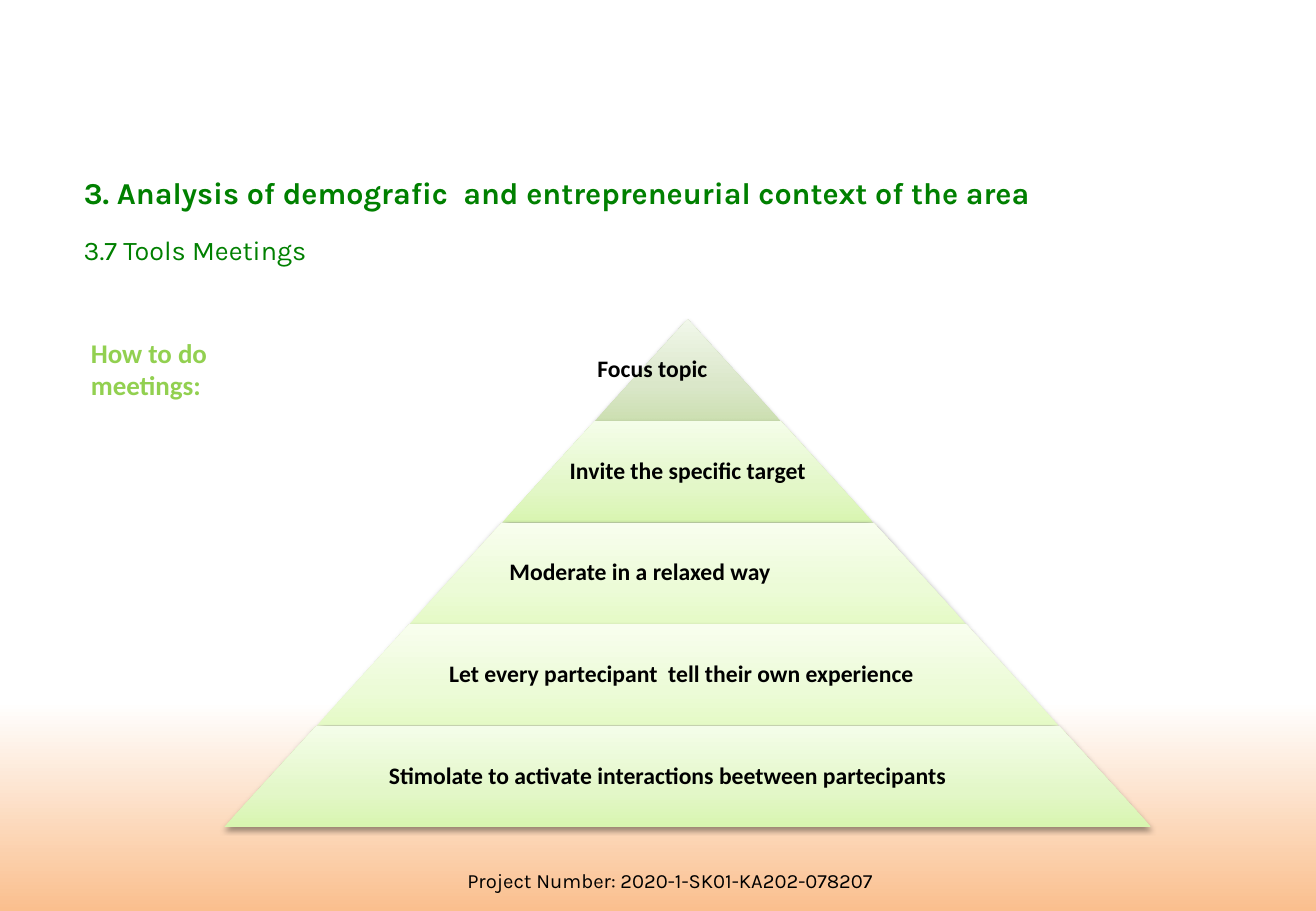
from lxml.etree import SubElement as Sub
from pptx import Presentation
from pptx.dml.color import RGBColor as RGB
from pptx.enum.shapes import MSO_SHAPE as Kind
from pptx.enum.text import MSO_ANCHOR as Anchor, MSO_AUTO_SIZE as Fit, PP_ALIGN as Align
from pptx.oxml.ns import qn
from pptx.util import Inches, Pt

GREEN, LIME, BLACK = "008000", "92D050", "000000"
PALE = [(0, "E5FAC6"), (35, "ECFBD7"), (100, "F8FEEE")]
FRESH = [(0, "D8F5B0"), (35, "E3F7C8"), (100, "F4FDE9")]
SAGE = [(0, "CCDFB1"), (35, "DAE7C9"), (100, "F1F7EA")]
PAGE = [(0, "FFFFFF"), (77, "FFFFFF"), (100, "FABF8E")]
TIERS = [
    ("Focus topic", SAGE),
    ("Invite the specific target", FRESH),
    ("Moderate in a relaxed way", PALE),
    ("Let every partecipant  tell their own experience", PALE),
    ("Stimolate to activate interactions beetween partecipants", FRESH),
]
MID, TOP = 5.66, 2.63
STEP, HIGH = 7.63 / len(TIERS), 4.18 / len(TIERS)


def color(code):
    """Turn a hex string into a colour."""
    return RGB.from_string(code)


def blend(fill, root, stops, angle):
    """Give a fill a linear gradient with any number of stops."""
    fill.gradient()
    fill.gradient_angle = angle
    group = root.find(".//" + qn("a:gsLst"))
    for old in list(group):
        group.remove(old)
    for place, code in stops:
        stop = Sub(group, qn("a:gs"), pos=str(place * 1000))
        Sub(stop, qn("a:srgbClr"), val=code)


def write(shape, text, size=14, font="Calibri", code=BLACK, bold=False,
          align=Align.LEFT, anchor=Anchor.TOP, pad=(0.1, 0.05, 0.1, 0.05), line=None):
    """Put formatted text into a shape."""
    frame = shape.text_frame
    frame.auto_size, frame.word_wrap = Fit.NONE, True
    frame.vertical_anchor = anchor
    (frame.margin_left, frame.margin_top,
     frame.margin_right, frame.margin_bottom) = map(Inches, pad)
    para = frame.paragraphs[0]
    para.alignment, para.line_spacing = align, line
    run = para.add_run()
    run.text = text
    run.font.size, run.font.name, run.font.bold = Pt(size), font, bold
    run.font.color.rgb = color(code)


def label(slide, area, text, **form):
    """Add a text box."""
    write(slide.shapes.add_textbox(*map(Inches, area)), text, **form)


def shade(shape):
    """Add a soft shadow below a shape."""
    shape.shadow.inherit = False
    effects = shape.element.spPr.find(qn("a:effectLst"))
    cast = Sub(effects, qn("a:outerShdw"), blurRad=str(Pt(3.1)), dist=str(Pt(1.6)),
               dir="5400000", rotWithShape="0")
    tint = Sub(cast, qn("a:srgbClr"), val=BLACK)
    Sub(tint, qn("a:alpha"), val="38000")


def tier(slide, rank, text, stops):
    """Add one level of the pyramid and its label."""
    width, top = STEP * (rank + 1), TOP + HIGH * rank
    area = map(Inches, (MID - width / 2, top, width, HIGH))
    shape = slide.shapes.add_shape(Kind.TRAPEZOID, *area)
    shape.adjustments[0] = STEP / 2 / HIGH
    blend(shape.fill, shape.element, stops, 90)
    shape.line.fill.background()
    shade(shape)
    span = width * 0.65 if rank else width
    label(slide, (MID - span / 2, top, span, HIGH), text, bold=True,
          anchor=Anchor.MIDDLE, pad=(0.02, 0.02, 0, 0.02), line=0.9)


def main():
    """Build the slide and save it."""
    deck = Presentation()
    deck.slide_width, deck.slide_height = Inches(10.83), Inches(7.5)
    slide = deck.slides.add_slide(deck.slide_layouts[5])
    blend(slide.background.fill, slide.element, PAGE, 270)

    title = slide.shapes.title
    title.left, title.top, title.width, title.height = map(Inches, (0.59, 1.38, 9.65, 0.39))
    write(title, "3. Analysis of demografic  and entrepreneurial context of the area",
          size=18, font="Karla", code=GREEN, bold=True)
    label(slide, (0.59, 1.87, 9.65, 0.39), "3.7 Tools Meetings",
          size=16, font="Karla", code=GREEN)
    label(slide, (0.65, 2.72, 1.24, 1.45), "How to do meetings:",
          size=16, code=LIME, bold=True)
    for rank, (text, stops) in enumerate(TIERS):
        tier(slide, rank, text, stops)
    label(slide, (3.74, 7.1, 3.55, 0.3), "Project Number: 2020-1-SK01-KA202-078207",
          size=12, font="Karla", align=Align.CENTER)
    deck.save("out.pptx")


if __name__ == "__main__":
    main()
